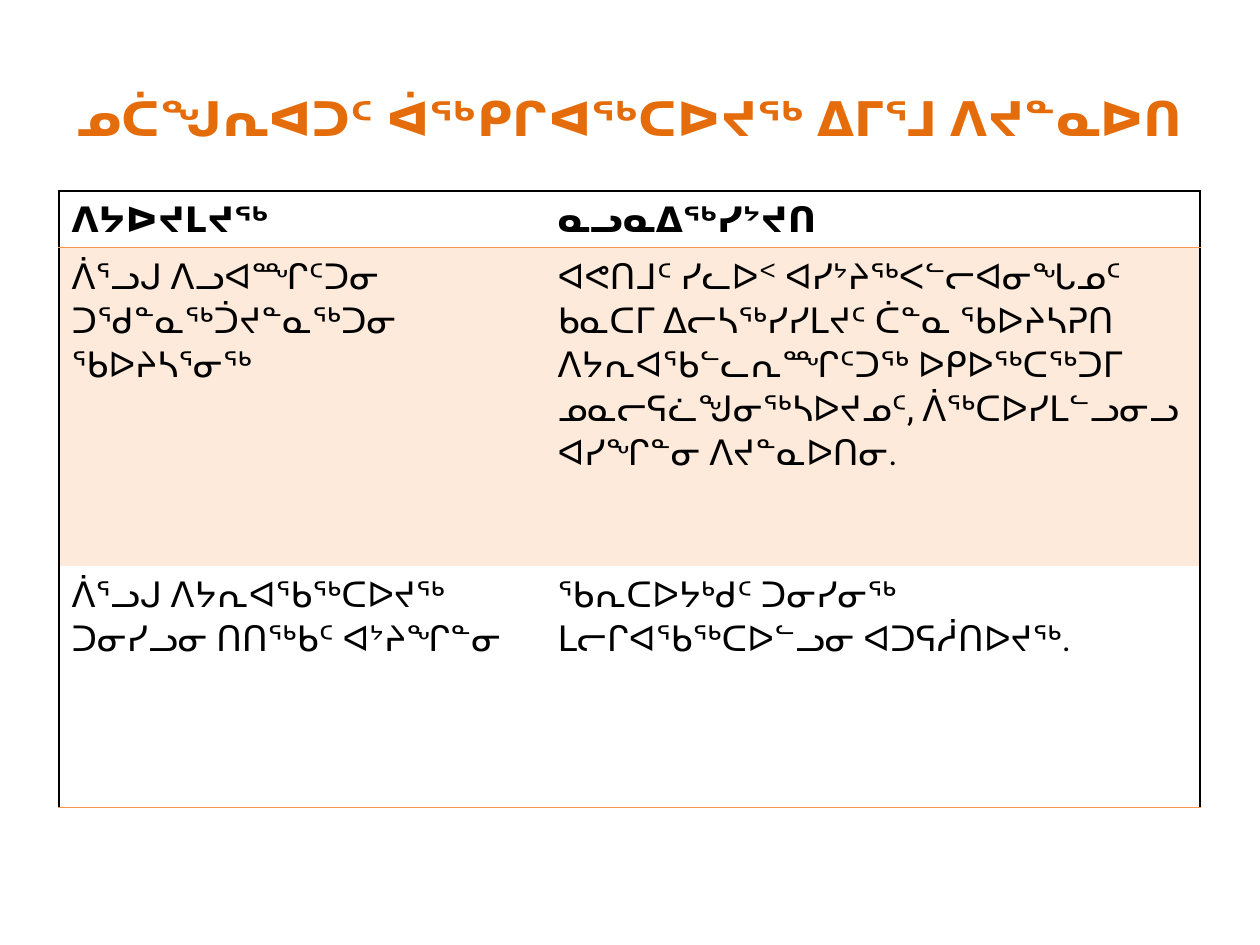
from lxml.etree import SubElement
from pptx import Presentation
from pptx.dml.color import RGBColor
from pptx.enum.text import MSO_ANCHOR, MSO_AUTO_SIZE, PP_ALIGN
from pptx.oxml.ns import qn
from pptx.util import Pt

TITLE = "ᓄᑖᖑᕆᐊᑐᑦ ᐋᖅᑭᒋᐊᖅᑕᐅᔪᖅ ᐃᒥᕐᒧ ᐱᔪᓐᓇᐅᑎ"
ROWS = [
    ("ᐱᔭᐅᔪᒪᔪᖅ", "ᓇᓗᓇᐃᖅᓯᔾᔪᑎ"),
    ("ᐲᕐᓗᒍ ᐱᓗᐊᙱᑦᑐᓂ ᑐᖁᓐᓇᖅᑑᔪᓐᓇᖅᑐᓂ ᖃᐅᔨᓴᕐᓂᖅ",
     "ᐊᕙᑎᒧᑦ ᓯᓚᐅᑉ ᐊᓯᔾᔨᖅᐸᓪᓕᐊᓂᖓᓄᑦ ᑲᓇᑕᒥ ᐃᓕᓴᖅᓯᓯᒪᔪᑦ ᑖᓐᓇ ᖃᐅᔨᓴᕈᑎ "
     "ᐱᔭᕆᐊᖃᓪᓚᕆᙱᑦᑐᖅ ᐅᑭᐅᖅᑕᖅᑐᒥ ᓄᓇᓕᕋᓛᖑᓂᖅᓴᐅᔪᓄᑦ, ᐲᖅᑕᐅᓯᒪᓪᓗᓂᓗ ᐊᓯᖏᓐᓂ ᐱᔪᓐᓇᐅᑎᓂ."),
    ("ᐲᕐᓗᒍ ᐱᔭᕆᐊᖃᖅᑕᐅᔪᖅ ᑐᓂᓯᓗᓂ ᑎᑎᖅᑲᑦ ᐊᔾᔨᖏᓐᓂ",
     "ᖃᕆᑕᐅᔭᒃᑯᑦ ᑐᓂᓯᓂᖅ ᒪᓕᒋᐊᖃᖅᑕᐅᓪᓗᓂ ᐊᑐᕋᓲᑎᐅᔪᖅ."),
]

THEME = {
    "title": "E46C0A", "ink": "000000", "rule": "F79646", "band": "FDEADA",
    "title_font": "Arial", "body_font": "Roboto",
    "title_size": 27.3, "body_size": 20, "line": 1,
}
PX = 914400 / 126
COL_WIDTHS = (486, 655)
ROW_HEIGHTS = (49, 318, 242)
NO_STYLE = "{2D5ABB26-0587-4C30-8999-92F81FD0307C}"


def px(n):
    return round(n * PX)


def write(tf, text, *, font, size, color, bold=False, align=PP_ALIGN.LEFT,
          spacing=None, after=None):
    tf.word_wrap = True
    p = tf.paragraphs[0]
    p.alignment = align
    if spacing:
        p.line_spacing = spacing
    if after:
        p.space_after = Pt(after)
    r = p.add_run()
    r.text = text
    r.font.name, r.font.size, r.font.bold = font, Pt(size), bold
    r.font.color.rgb = RGBColor.from_string(color)


def add_borders(cell, sides):
    """Draw the given sides; keys must come in the order L, R, T, B."""
    tcPr = cell._tc.get_or_add_tcPr()
    for side, color in sides.items():
        ln = SubElement(tcPr, qn(f"a:ln{side}"), w=str(Pt(THEME["line"])))
        fill = SubElement(ln, qn("a:solidFill"))
        SubElement(fill, qn("a:srgbClr"), val=color)


def add_title(s):
    title = s.shapes.title
    title.left, title.top, title.width, title.height = map(px, (0, 38, 1260, 158))
    tf = title.text_frame
    tf.auto_size = MSO_AUTO_SIZE.NONE
    tf.vertical_anchor = MSO_ANCHOR.MIDDLE
    write(tf, TITLE, font=THEME["title_font"], size=THEME["title_size"],
          color=THEME["title"], bold=True, align=PP_ALIGN.CENTER)


def add_grid(s):
    last = len(ROWS) - 1
    table = s.shapes.add_table(
        len(ROWS), len(COL_WIDTHS), px(59), px(191),
        px(sum(COL_WIDTHS)), px(sum(ROW_HEIGHTS))).table
    table._tbl.tblPr.find(qn("a:tableStyleId")).text = NO_STYLE
    for col, width in zip(table.columns, COL_WIDTHS):
        col.width = px(width)
    for i, (row, height) in enumerate(zip(table.rows, ROW_HEIGHTS)):
        row.height = px(height)
        for j, cell in enumerate(row.cells):
            sides = {"L" if j == 0 else "R": THEME["ink"]}
            if i == 0:
                sides["T"] = THEME["ink"]
            if i in (0, last):
                sides["B"] = THEME["rule"]
            add_borders(cell, sides)
            if i == 1:
                cell.fill.solid()
                cell.fill.fore_color.rgb = RGBColor.from_string(THEME["band"])
            else:
                cell.fill.background()
            write(cell.text_frame, ROWS[i][j], font=THEME["body_font"],
                  size=THEME["body_size"], color=THEME["ink"], bold=i == 0,
                  spacing=1.07, after=8)


def main():
    prs = Presentation()
    prs.slide_width, prs.slide_height = px(1260), px(945)
    s = prs.slides.add_slide(prs.slide_layouts[5])
    add_title(s)
    add_grid(s)
    prs.save("out.pptx")


if __name__ == "__main__":
    main()
